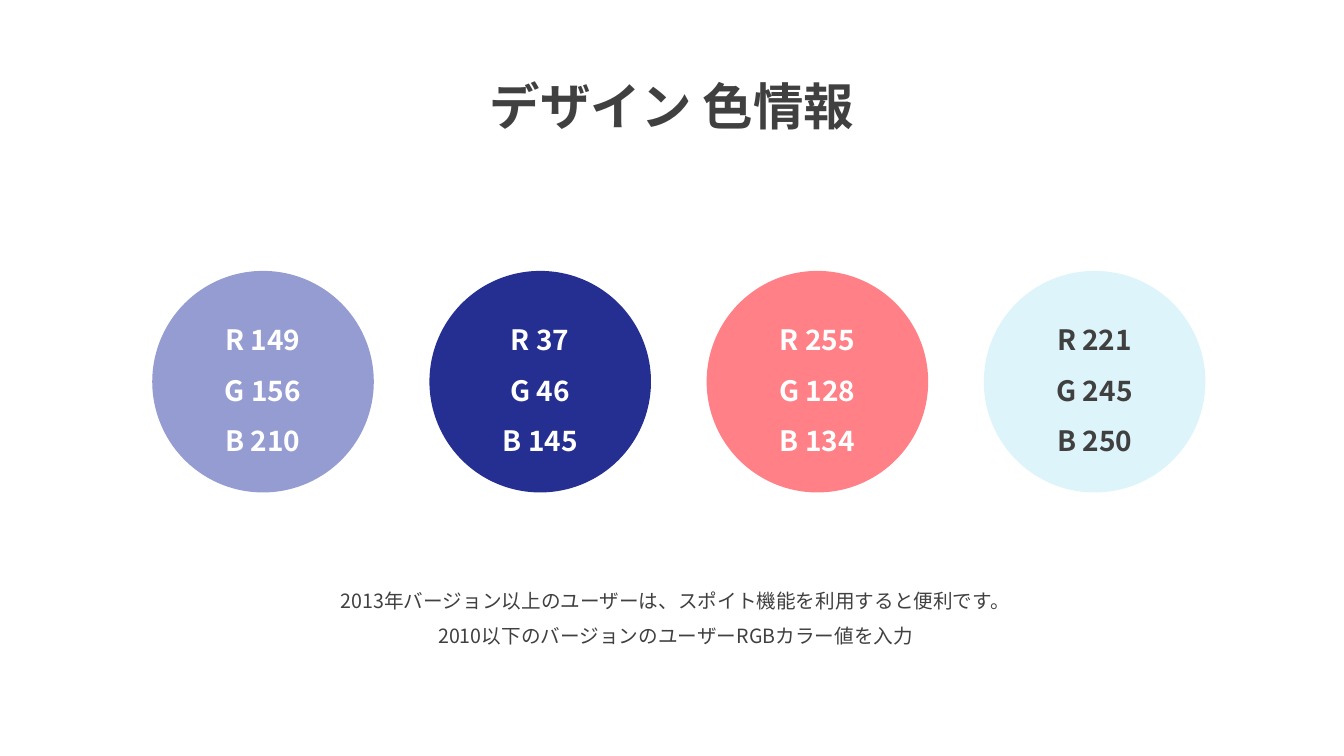
"""Build a slide that lists the RGB values of a four-colour palette."""
import lxml.etree
import pptx
import pptx.dml.color
import pptx.enum.shapes
import pptx.enum.text
import pptx.oxml.ns
import pptx.util

PX = 9525
SLIDE_SIZE = (1280, 720)
FONT = "Noto Sans CJK KR"
DARK, WHITE = "404040", "FFFFFF"

SWATCH_LEFT, SWATCH_TOP, SWATCH_SIZE, SWATCH_PITCH = 145, 258, 211, 264
PALETTE = [
    ((149, 156, 210), WHITE),
    ((37, 46, 145), WHITE),
    ((255, 128, 134), WHITE),
    ((221, 245, 250), DARK),
]


def color(value):
    return pptx.dml.color.RGBColor.from_string(value)


class PaletteSlide:
    """Hold the text style and the slide being drawn."""

    def __init__(self, slide, font, line_spacing):
        self.slide = slide
        self.font = font
        self.line_spacing = line_spacing

    def set_lines(self, frame, lines, size, ink, bold):
        frame.word_wrap = True
        frame.text = "\n".join(lines)
        for paragraph in frame.paragraphs:
            paragraph.alignment = pptx.enum.text.PP_ALIGN.CENTER
            paragraph.line_spacing = self.line_spacing
            for run in paragraph.runs:
                run.font.name = self.font
                run.font.size = pptx.util.Pt(size)
                run.font.bold = bold
                run.font.color.rgb = color(ink)
                east_asian = lxml.etree.SubElement(
                    run._r.get_or_add_rPr(), pptx.oxml.ns.qn("a:ea"))
                east_asian.set("typeface", self.font)

    def text(self, box, lines, size, bold=False):
        label = self.slide.shapes.add_textbox(*(n * PX for n in box))
        self.set_lines(label.text_frame, lines, size, DARK, bold)
        label.text_frame.auto_size = pptx.enum.text.MSO_AUTO_SIZE.SHAPE_TO_FIT_TEXT

    def swatch(self, left, rgb, ink):
        box = (left, SWATCH_TOP, SWATCH_SIZE, SWATCH_SIZE)
        circle = self.slide.shapes.add_shape(
            pptx.enum.shapes.MSO_SHAPE.OVAL, *(n * PX for n in box))
        circle.shadow.inherit = False
        circle.fill.solid()
        circle.fill.fore_color.rgb = color("%02X%02X%02X" % rgb)
        circle.line.fill.background()
        circle.text_frame.vertical_anchor = pptx.enum.text.MSO_ANCHOR.MIDDLE
        lines = [f"{channel} {level}" for channel, level in zip("RGB", rgb)]
        self.set_lines(circle.text_frame, lines, 20, ink, True)


def main():
    deck = pptx.Presentation()
    deck.slide_width, deck.slide_height = (n * PX for n in SLIDE_SIZE)
    page = PaletteSlide(deck.slides.add_slide(deck.slide_layouts[6]), FONT, 1.5)

    for index, (rgb, ink) in enumerate(PALETTE):
        page.swatch(SWATCH_LEFT + index * SWATCH_PITCH, rgb, ink)

    page.text((407, 38, 466, 87), ["デザイン 色情報"], 36, bold=True)
    page.text((242, 545, 803, 74), [
        "2013年バージョン以上のユーザーは、スポイト機能を利用すると便利です。",
        "2010以下のバージョンのユーザーRGBカラー値を入力",
    ], 14)
    deck.save("out.pptx")


if __name__ == "__main__":
    main()
